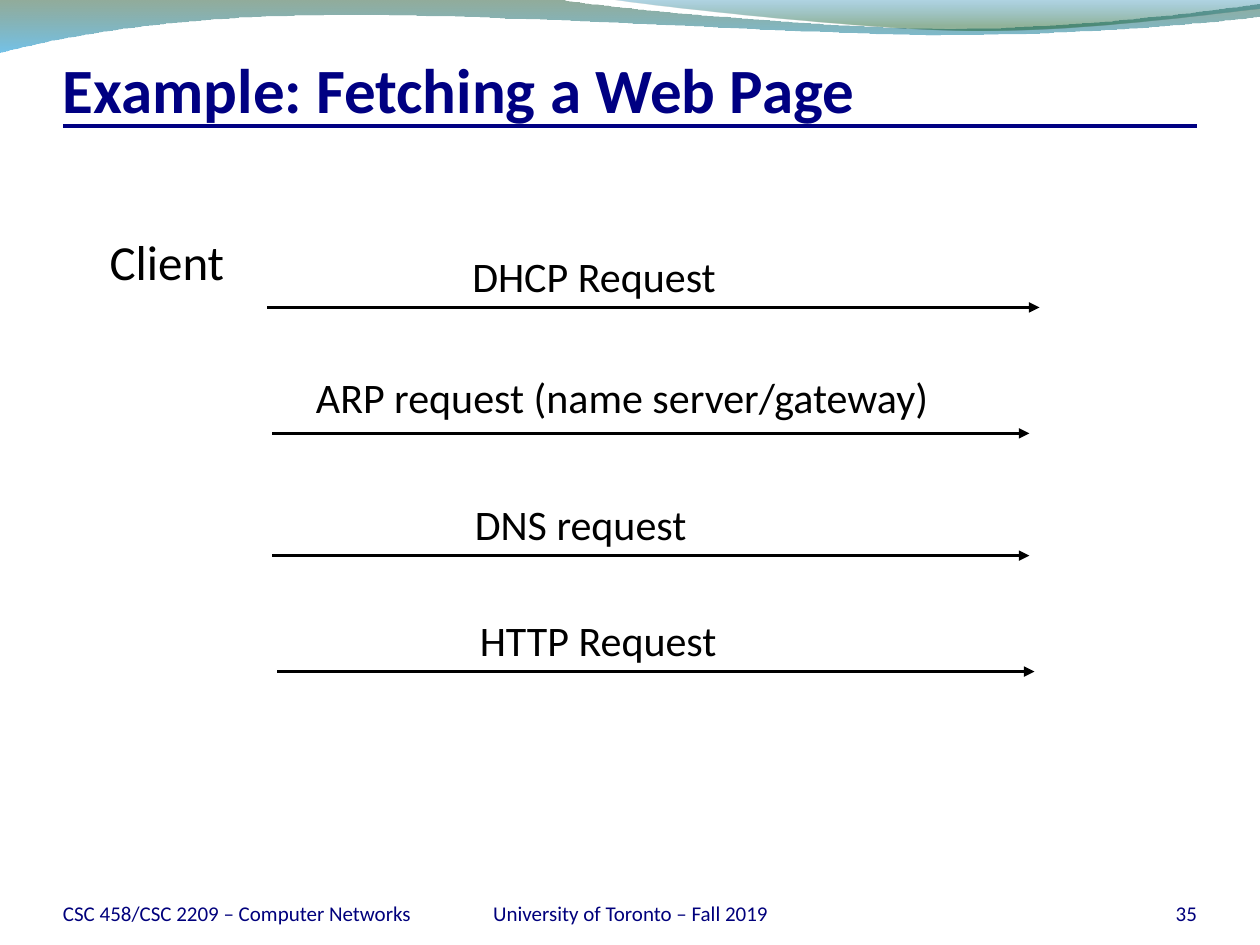
"""Build the slide listing the requests made when fetching a web page."""
from lxml import etree
from pptx import Presentation
from pptx import util as u
from pptx.dml.color import RGBColor
from pptx.enum import shapes, text
from pptx.oxml.ns import qn

NAVY = RGBColor(0x00, 0x00, 0x82)
FOOTER = RGBColor(0x00, 0x00, 0x7C)
BLACK = RGBColor(0, 0, 0)
GREEN = RGBColor(0x0F, 0x46, 0x1E)
SKY = RGBColor(0x00, 0x90, 0xD6)
BLUE = RGBColor(0x00, 0x76, 0xAF)
FOREST = RGBColor(0x0D, 0x58, 0x21)
FONT = "Calibri"
LEFT, CENTER, RIGHT = text.PP_ALIGN.LEFT, text.PP_ALIGN.CENTER, text.PP_ALIGN.RIGHT

TITLE = ("Example: Fetching a Web Page", (0.5, 0.33, 9, 0.67))
CLIENT = ("Client", (0.77, 1.79, 1.11, 0.57))
FOOTERS = [
    ("CSC 458/CSC 2209 – Computer Networks", (0.5, 6.95, 2.83, 0.4), LEFT),
    ("35", (8.67, 6.95, 0.83, 0.4), RIGHT),
    ("University of Toronto – Fall 2019", (3.42, 6.95, 3.17, 0.4), CENTER),
]
REQUESTS = [
    ("DHCP Request", (3.65, 1.94, 2.14, 0.5), (2.12, 8.25, 2.44)),
    ("ARP request (name server/gateway)", (2.41, 2.9, 5.1, 0.5), (2.16, 8.17, 3.44)),
    ("DNS request", (3.67, 3.91, 1.89, 0.5), (2.16, 8.17, 4.41)),
    ("HTTP Request", (3.71, 4.83, 2.09, 0.5), (2.2, 8.21, 5.33)),
]
WAVES = [
    {
        "start": (0, -0.01),
        "segments": [
            [(4.4, -0.01)],
            [(4.76, 0.06), (6.64, 0.23), (7.58, 0.23)],
            [(8.53, 0.23), (9.58, 0.09), (10, 0.03)],
            [(10.01, 0.13)],
            [(9.83, 0.16), (8.7, 0.28), (7.46, 0.28)],
            [(6.22, 0.27), (3.82, 0.1), (2.57, 0.12)],
            [(1.29, 0.13), (0.46, 0.3), (-0.01, 0.42)],
            [(0, -0.01)],
        ],
        "stops": [(0, GREEN, 45), (1, SKY, 55)],
    },
    {
        "start": (4.79, -0.01),
        "segments": [
            [(5.09, 0.04), (6.82, 0.23), (7.69, 0.24)],
            [(8.56, 0.25), (9.61, 0.11), (10, 0.07)],
            [(10, -0.01)],
            [(4.79, -0.01)],
        ],
        "stops": [(0, BLUE, 30), (0.8, FOREST, 45)],
    },
]


def curve_segments(sp, segments):
    lines = iter(list(sp._element.iter(qn("a:lnTo"))))
    for seg in segments:
        group = [next(lines) for _ in seg]
        if len(group) == 3:
            curve = etree.Element(qn("a:cubicBezTo"))
            group[0].addprevious(curve)
            for line in group:
                curve.append(line[0])
                line.getparent().remove(line)


def add_wave(s, start, segments, stops):
    builder = s.shapes.build_freeform(*map(u.Inches, start))
    pts = [tuple(map(u.Inches, pt)) for seg in segments for pt in seg]
    builder.add_line_segments(pts, close=True)
    sp = builder.convert_to_shape()
    curve_segments(sp, segments)
    sp.shadow.inherit = False
    sp.line.fill.background()
    sp.fill.gradient()
    sp.fill.gradient_angle = 270
    for stop, (pos, color, _) in zip(sp.fill.gradient_stops, stops):
        stop.position = pos
        stop.color.rgb = color
    colors = sp._element.spPr.iter(qn("a:srgbClr"))
    for clr, (_, _, alpha) in zip(list(colors), stops):
        etree.SubElement(clr, qn("a:alpha"), val=str(alpha * 1000))


def add_line(s, x1, x2, y, color, width, arrow=False):
    ln = s.shapes.add_connector(
        shapes.MSO_CONNECTOR.STRAIGHT, *map(u.Inches, (x1, y, x2, y)))
    ln.line.color.rgb = color
    ln.line.width = u.Pt(width)
    if arrow:
        etree.SubElement(ln.line._get_or_add_ln(), qn("a:tailEnd"), type="triangle")
    etree.SubElement(ln._element.spPr, qn("a:effectLst"))


def add_text(s, words, box, size, color, frame, align=LEFT, bold=False):
    tf = s.shapes.add_textbox(*map(u.Inches, box)).text_frame
    for name, value in frame.items():
        setattr(tf, name, value)
    p = tf.paragraphs[0]
    p.alignment = align
    r = p.add_run()
    r.text = words
    for name, value in {"name": FONT, "size": u.Pt(size), "bold": bold}.items():
        setattr(r.font, name, value)
    r.font.color.rgb = color


def main():
    prs = Presentation()
    prs.slide_width, prs.slide_height = u.Inches(10), u.Inches(7.5)
    s = prs.slides.add_slide(prs.slide_layouts[6])
    label = {"word_wrap": False, "auto_size": text.MSO_AUTO_SIZE.SHAPE_TO_FIT_TEXT}
    flush = {
        "word_wrap": True, "vertical_anchor": text.MSO_ANCHOR.BOTTOM,
        "margin_left": 0, "margin_right": 0, "margin_top": 0, "margin_bottom": 0,
    }
    heading = {**flush, "margin_top": u.Inches(0.05)}

    for wave in WAVES:
        add_wave(s, **wave)
    add_line(s, 0.5, 9.5, 1, NAVY, 2.25)
    for words, box, align in FOOTERS:
        add_text(s, words, box, 12, FOOTER, flush, align)
    add_text(s, *TITLE, 36, NAVY, heading, bold=True)
    add_text(s, *CLIENT, 28, BLACK, label, CENTER)
    for words, box, arrow in REQUESTS:
        add_text(s, words, box, 24, BLACK, label)
        add_line(s, *arrow, BLACK, 2, arrow=True)
    prs.save("out.pptx")


if __name__ == "__main__":
    main()
